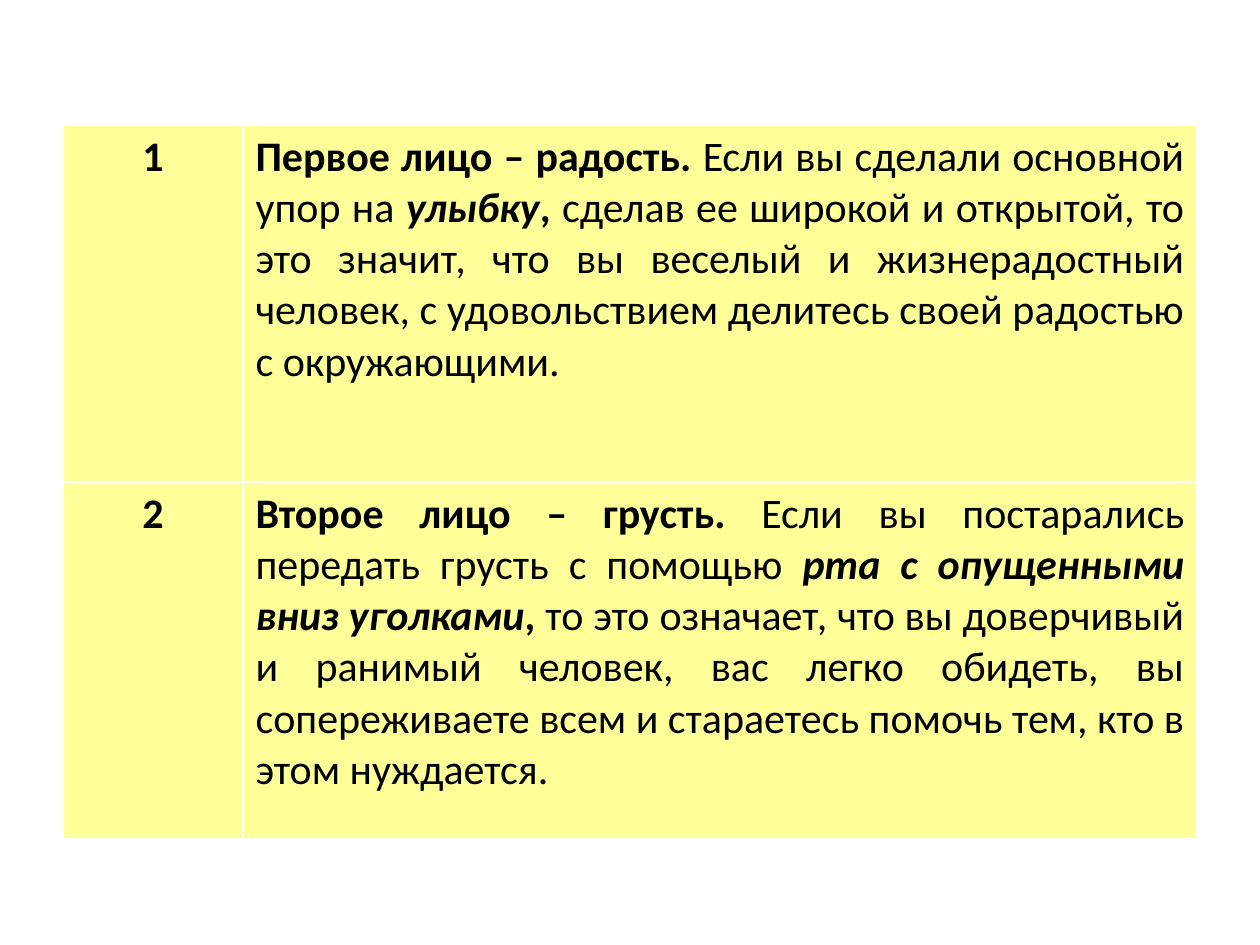
from pptx import Presentation
from pptx.dml.color import RGBColor
from pptx.enum.text import PP_ALIGN as Align
from pptx.util import Emu, Pt

EMU_PER_PX = 914400 / 126
YELLOW = RGBColor(0xFF, 0xFF, 0x99)
BLACK = RGBColor(0, 0, 0)

PLAIN = (False, False)
BOLD = (True, False)
BOLD_ITALIC = (True, True)

FACES = [
    [
        ("Первое лицо – радость. ", BOLD),
        ("Если вы сделали основной упор на ", PLAIN),
        ("улыбку", BOLD_ITALIC),
        (", ", BOLD),
        ("сделав ее широкой и открытой, то это значит, что вы веселый и "
         "жизнерадостный человек, с удовольствием делитесь своей радостью "
         "с окружающими. ", PLAIN),
    ],
    [
        ("Второе лицо – грусть. ", BOLD),
        ("Если вы постарались передать грусть с помощью ", PLAIN),
        ("рта с опущенными вниз уголками", BOLD_ITALIC),
        (", ", BOLD),
        ("то это означает, что вы доверчивый и ранимый человек, вас легко "
         "обидеть, вы сопереживаете всем и стараетесь помочь тем, кто "
         "в этом нуждается.", PLAIN),
    ],
]


def px(length):
    return Emu(round(length * EMU_PER_PX))


def fill_cell(cell, phrases, alignment):
    cell.fill.solid()
    cell.fill.fore_color.rgb = YELLOW
    paragraph = cell.text_frame.paragraphs[0]
    paragraph.alignment = alignment
    paragraph.font.name = "Calibri"
    paragraph.font.size = Pt(24)
    for wording, (bold, italic) in phrases:
        phrase = paragraph.add_run()
        phrase.text = wording
        phrase.font.bold = bold
        phrase.font.italic = italic
        phrase.font.color.rgb = BLACK


def add_faces_table(slide, left, top, column_widths, row_height):
    faces = slide.shapes.add_table(
        len(FACES), len(column_widths), px(left), px(top),
        px(sum(column_widths)), px(row_height * len(FACES))).table
    for column, width in zip(faces.columns, column_widths):
        column.width = px(width)
    for number, (row, description) in enumerate(zip(faces.rows, FACES), 1):
        row.height = px(row_height)
        number_cell, description_cell = row.cells
        fill_cell(number_cell, [(str(number), BOLD)], Align.CENTER)
        fill_cell(description_cell, description, Align.JUSTIFY)


def main():
    presentation = Presentation()
    presentation.slide_width = px(1260)
    presentation.slide_height = px(945)
    slide = presentation.slides.add_slide(presentation.slide_layouts[6])
    add_faces_table(slide, 63, 125, (180, 954), 357)
    presentation.save("out.pptx")


if __name__ == "__main__":
    main()
